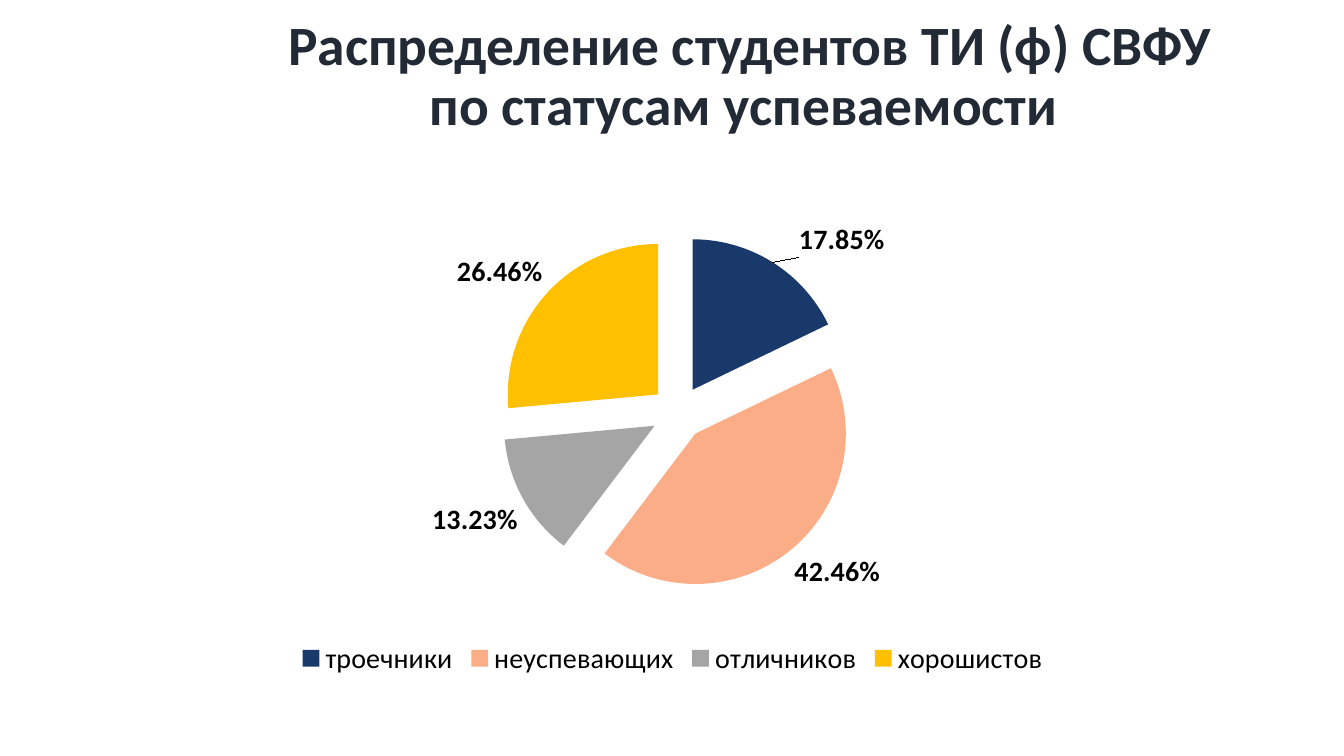
from typing import NamedTuple

import pptx
import pptx.chart.data
import pptx.dml.color
import pptx.enum.chart
import pptx.enum.text
import pptx.oxml
import pptx.oxml.ns
import pptx.util

Inches = pptx.util.Inches
Pt = pptx.util.Pt

FONT = "Calibri"
PERCENT = "0.00%"
COLORS = {
    "title": "222A35",
    "text": "000000",
    "navy": "1A396B",
    "peach": "FBAD87",
    "grey": "A5A5A5",
    "gold": "FFC000",
}


class Status(NamedTuple):
    name: str
    share: float
    color: str


STATUSES = [
    Status("троечники", 0.1785, "navy"),
    Status("неуспевающих", 0.4246, "peach"),
    Status("отличников", 0.1323, "grey"),
    Status("хорошистов", 0.2646, "gold"),
]


def rgb(name: str) -> pptx.dml.color.RGBColor:
    return pptx.dml.color.RGBColor.from_string(COLORS[name])


def style_font(font, size: float, color: str, bold: bool = False) -> None:
    font.name = FONT
    font.size = Pt(size)
    font.bold = bold
    font.color.rgb = rgb(color)


def chart_element(tag: str, content: str = "", attributes: str = ""):
    namespace = pptx.oxml.ns.nsdecls("c")
    return pptx.oxml.parse_xml(f"<c:{tag} {namespace} {attributes}>{content}</c:{tag}>")


def manual_layout(target: str = "", **values: float):
    """Layout in fractions of the chart; for a label, x and y are offsets."""
    if target:
        target = f'<c:layoutTarget val="{target}"/><c:xMode val="edge"/><c:yMode val="edge"/>'
    sizes = "".join(f'<c:{key} val="{value}"/>' for key, value in values.items())
    return chart_element("layout", f"<c:manualLayout>{target}{sizes}</c:manualLayout>")


def add_title(page) -> None:
    box = page.shapes.add_textbox(Inches(2.46), Inches(0.4), Inches(9.96), Inches(0.74))
    frame = box.text_frame
    frame.word_wrap = True
    frame.vertical_anchor = pptx.enum.text.MSO_ANCHOR.MIDDLE
    para = frame.paragraphs[0]
    para.text = "Распределение студентов ТИ (ф) СВФУ по статусам успеваемости "
    para.alignment = pptx.enum.text.PP_ALIGN.CENTER
    para.line_spacing = 0.9
    style_font(para.font, 39.6, "title", bold=True)


def style_labels(series) -> None:
    outside = pptx.enum.chart.XL_LABEL_POSITION.OUTSIDE_END
    labels = series.data_labels
    labels.show_value = True
    labels.show_percentage = False
    labels.number_format = PERCENT
    labels.number_format_is_linked = False
    labels.position = outside
    style_font(labels.font, 20, "text", bold=True)

    first = series.points[0].data_label
    style_font(first.font, 20, "text", bold=True)
    first.position = outside
    index = labels._element.find(pptx.oxml.ns.qn("c:dLbl"))[0]
    index.addnext(chart_element("numFmt", attributes=f'formatCode="{PERCENT}" sourceLinked="0"'))
    index.addnext(manual_layout(x=0.02, y=0))


def add_status_chart(page) -> None:
    data = pptx.chart.data.CategoryChartData(number_format=PERCENT)
    data.categories = [status.name for status in STATUSES]
    data.add_series("Series 1", [status.share for status in STATUSES])
    chart = page.shapes.add_chart(
        pptx.enum.chart.XL_CHART_TYPE.PIE,
        Inches(0.92), Inches(2), Inches(11.5), Inches(4.76), data,
    ).chart
    chart.has_title = False
    style_font(chart.font, 10, "text")
    chart.has_legend = True
    chart.legend.position = pptx.enum.chart.XL_LEGEND_POSITION.BOTTOM
    chart.legend.include_in_layout = False
    style_font(chart.legend.font, 20, "text")

    plot = chart.plots[0]
    plot.vary_by_categories = True
    series = plot.series[0]
    for index, status in enumerate(STATUSES):
        fill = series.points[index].format.fill
        fill.solid()
        fill.fore_color.rgb = rgb(status.color)
    first_point = series._element.find(pptx.oxml.ns.qn("c:dPt"))
    first_point.addprevious(chart_element("explosion", attributes='val="18"'))
    style_labels(series)

    plot_area = plot._element.getparent()
    for layout in plot_area.findall(pptx.oxml.ns.qn("c:layout")):
        plot_area.remove(layout)
    plot_area.insert(0, manual_layout("inner", x=0.35, y=0.07, w=0.31, h=0.74))


def main() -> None:
    deck = pptx.Presentation()
    deck.slide_width = Inches(13.33)
    deck.slide_height = Inches(7.5)
    page = deck.slides.add_slide(deck.slide_layouts[6])
    add_title(page)
    add_status_chart(page)
    deck.save("out.pptx")


if __name__ == "__main__":
    main()
